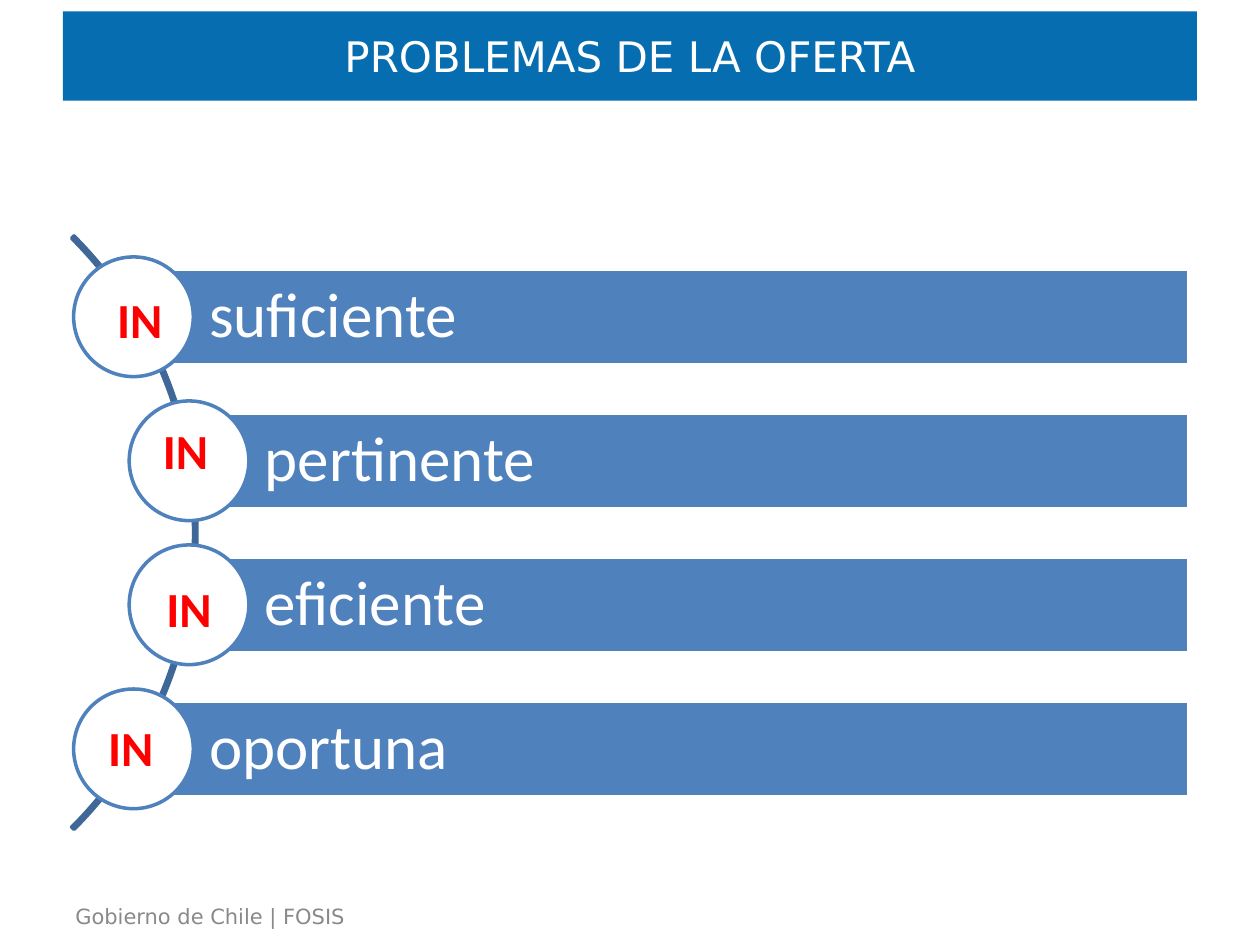
from pptx import Presentation
from pptx.dml.color import RGBColor as Rgb
from pptx.enum.shapes import MSO_SHAPE as Kind
from pptx.enum.text import MSO_ANCHOR as Anchor, PP_ALIGN as Align
from pptx.util import Cm, Pt

HUES = {"title": "066EB0", "bar": "4F81BD", "arc": "3F6797",
        "white": "FFFFFF", "red": "FF0000", "gray": "898989"}
ROWS = [("suficiente", 2.69, 0.23, 0.53), ("pertinente", 3.81, 0.03, 0.28),
        ("eficiente", 3.81, 0.1, 0.56), ("oportuna", 2.69, 0.05, 0.46)]


def hue(name):
    """Return the named colour."""
    return Rgb.from_string(HUES[name])


def draw(slide, kind, box, fill=None, line=None):
    """Add a flat shape in the box."""
    shape = slide.shapes.add_shape(kind, *map(Cm, box))
    shape.shadow.inherit = False
    if fill:
        shape.fill.solid()
        shape.fill.fore_color.rgb = hue(fill)
    else:
        shape.fill.background()
    if line:
        shape.line.color.rgb = hue(line)
        shape.line.width = Pt(2)
    else:
        shape.line.fill.background()
    return shape


def write(shape, text, size, color, face="Calibri", align=Align.LEFT, bold=False):
    """Put one styled paragraph in the shape."""
    para = shape.text_frame.paragraphs[0]
    para.text = text
    para.alignment = align
    font = para.font
    font.name, font.size, font.bold = face, Pt(size), bold
    font.color.rgb = hue(color)
    return para


def add_title(slide, box):
    """Draw the title band."""
    band = draw(slide, Kind.RECTANGLE, box, "title")
    band.text_frame.vertical_anchor = Anchor.MIDDLE
    write(band, "PROBLEMAS DE LA OFERTA", 24, "white", "DejaVu Sans", Align.CENTER)


def add_foot(slide, box):
    """Write the footer."""
    foot = slide.shapes.add_textbox(*map(Cm, box))
    foot.text_frame.word_wrap = False
    write(foot, "Gobierno de Chile | FOSIS", 12, "gray", "DejaVu Sans")


def add_row(slide, box, text, dx, dy):
    """Draw a bar with its disc and red prefix."""
    left, top, _, high = box
    bar = draw(slide, Kind.RECTANGLE, box, "bar", "white")
    frame = bar.text_frame
    frame.margin_left = Cm(1.53)
    frame.margin_top = frame.margin_right = frame.margin_bottom = Cm(0.25)
    frame.vertical_anchor = Anchor.MIDDLE
    write(bar, text, 36, "white").line_spacing = 0.9
    size = high * 1.25
    x, y = left - size / 2, top + (high - size) / 2
    draw(slide, Kind.OVAL, (x, y, size, size), "white", "bar")
    mark = slide.shapes.add_textbox(Cm(x + dx), Cm(y + dy), Cm(2.21), Cm(1.45))
    mark.text_frame.word_wrap = True
    write(mark, "IN", 28, "red", align=Align.CENTER, bold=True)


def add_list(slide, box):
    """Draw the arc and the evenly spaced rows."""
    left, top, width, high = box
    bar = 1.93
    step = (high - bar) / (len(ROWS) - 1)
    size = 16.92
    arc = draw(slide, Kind.BLOCK_ARC,
               (-12.95, top + (high - size) / 2, size, size), line="arc")
    for i, value in enumerate((189, 27, 0.004)):
        arc.adjustments[i] = value
    for i, (text, x, dx, dy) in enumerate(ROWS):
        add_row(slide, (x, top + i * step, left + width - x, bar), text, dx, dy)


def main():
    """Build and save the slide."""
    deck = Presentation()
    deck.slide_width, deck.slide_height = Cm(25.4), Cm(19.05)
    slide = deck.slides.add_slide(deck.slide_layouts[6])
    add_foot(slide, (1.27, 18.08, 6.17, 0.76))
    add_title(slide, (1.27, 0.23, 22.86, 1.8))
    add_list(slide, (1.48, 5.42, 22.48, 10.64))
    deck.save("out.pptx")


if __name__ == "__main__":
    main()
